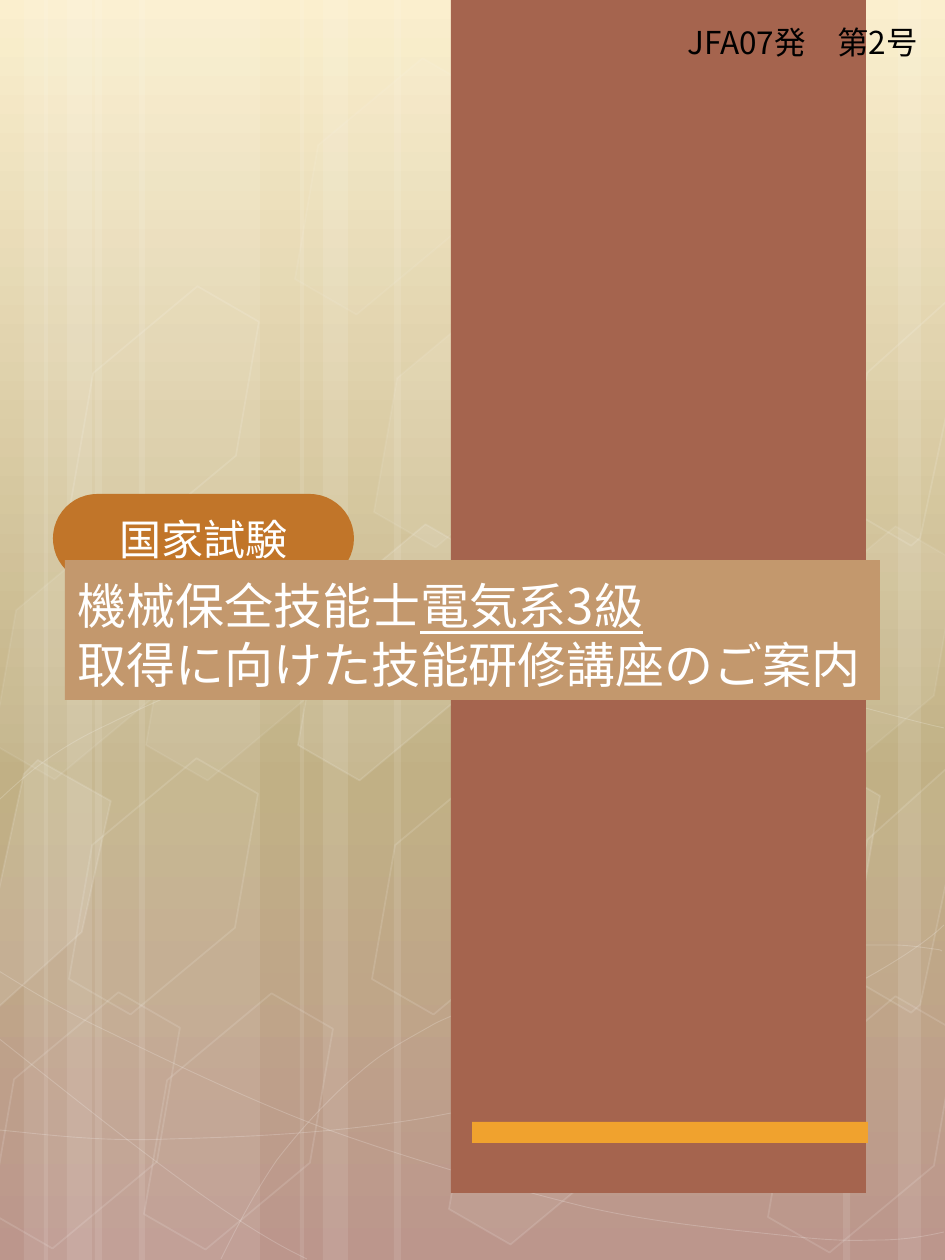
from copy import deepcopy
from math import cos, radians, sin

from lxml.etree import SubElement
from pptx import Presentation
from pptx.dml.color import RGBColor
from pptx.enum.shapes import MSO_SHAPE
from pptx.enum.text import MSO_ANCHOR, MSO_AUTO_SIZE, PP_ALIGN
from pptx.oxml.ns import qn
from pptx.util import Emu, Pt

WHITE = RGBColor(0xFF, 0xFF, 0xFF)
BLACK = RGBColor(0x00, 0x00, 0x00)
BRICK = RGBColor(0xA5, 0x64, 0x4E)
AMBER = RGBColor(0xF0, 0xA2, 0x2E)
ORANGE = RGBColor(0xC1, 0x75, 0x29)
TAN = RGBColor(0xC3, 0x98, 0x6D)
SKY = [
    (0, RGBColor(0xFB, 0xEE, 0xC9)),
    (0.62, RGBColor(0xBA, 0xA8, 0x78)),
    (1, RGBColor(0xB5, 0x8B, 0x80)),
]
SCALE = 914400 / 126
WIDTH, HEIGHT = 945, 1260
TILT = 30

WIDE, NARROW, MEDIUM = 165, 48, 78
STRIPES = [
    (95, WIDE, 0), (0, NARROW, 0), (24, MEDIUM, 0),
    (139, WIDE, 0), (44, NARROW, 0), (67, MEDIUM, 0),
    (685, WIDE, 180), (898, NARROW, 180), (843, MEDIUM, 180),
    (394, 291, 0), (300, NARROW, 0), (323, MEDIUM, 0),
]
CURVES = [
    [(-1, 1130), (50, 1135), (101, 1142), (171, 1139), (243, 1137), (330, 1134),
     (425, 1118), (519, 1101), (654, 1068), (740, 1037), (827, 1004), (915, 954),
     (944, 925)],
    [(-1, 800), (26, 775), (53, 750), (107, 725), (160, 699), (237, 663),
     (320, 650), (404, 638), (507, 638), (610, 650), (714, 663), (887, 716),
     (944, 728)],
    [(-3, 1037), (113, 1129), (226, 1221), (307, 1259)],
    [(-1, 971), (28, 989), (58, 1008), (113, 1034), (168, 1061), (251, 1101),
     (329, 1130), (410, 1159), (508, 1188), (586, 1207), (664, 1225), (748, 1231),
     (798, 1237), (848, 1242), (861, 1240), (885, 1240), (910, 1239), (926, 1236),
     (944, 1232)],
    [(221, 1259), (238, 1225), (255, 1192), (277, 1160), (300, 1130), (331, 1096),
     (358, 1074), (384, 1051), (401, 1043), (436, 1023), (470, 1007), (534, 983),
     (567, 971), (600, 960), (605, 960), (635, 955), (664, 951), (709, 946),
     (742, 945), (775, 942), (829, 945), (829, 945), (850, 945), (871, 945),
     (892, 945), (909, 945), (926, 948), (934, 949), (942, 950), (940, 950),
     (942, 951)],
]
HEXAGONS = [
    (310, 525, 10, 12), (384, 759, 0, 12), (386, 292, 7, 8), (307, 59, 4, 8),
    (461, 989, 6, 12), (3, 993, 0, 12), (5, 524, 7, 8), (81, 759, 0, 12),
    (156, 994, 0, 12), (158, 525, 7, 8), (82, 287, 0, 12), (703, 761, 10, 12),
    (780, 997, 0, 12), (780, 527, 7, 8),
]
LEFT_CUT = [(24, 774), (38, 760), (111, 801), (82, 932), (-18, 1022), (-28, 1016)]
RIGHT_CUT = [(867, 840), (966, 751), (973, 755), (920, 1005), (911, 1013), (839, 971)]
UPPER_CUT = [(x, y - 467) for x, y in RIGHT_CUT]
CUT_HEXAGONS = [
    (LEFT_CUT, (26, 900), 10), (RIGHT_CUT, (922, 872), 4), (UPPER_CUT, (922, 405), 0),
]


def px(value):
    return Emu(round(value * SCALE))


def turn(points, center, degrees):
    cx, cy = center
    c, n = cos(radians(degrees)), sin(radians(degrees))
    return [(cx + (x - cx) * c - (y - cy) * n, cy + (x - cx) * n + (y - cy) * c)
            for x, y in points]


class Deck:
    def __init__(self, s):
        self.s = s
        self.shapes = s.shapes

    def background(self, stops):
        fill = self.s.background.fill
        fill.gradient()
        fill.gradient_angle = 270
        gs_list = self.s.element.find(".//" + qn("a:gsLst"))
        gs_list.append(deepcopy(gs_list[0]))
        for stop, (position, color) in zip(fill.gradient_stops, stops):
            stop.position = position
            stop.color.rgb = color

    def open_backdrop(self):
        self.backdrop = self.s.shapes.add_group_shape()
        self.shapes = self.backdrop.shapes

    def close_backdrop(self):
        layout = self.s.slide_layout
        for sp in list(layout.placeholders)[1:]:
            layout.shapes.element.remove(sp.element)
        layout.shapes.element.append(self.backdrop.element)
        self.shapes = self.s.shapes

    def fade(self, sp, tag, alpha):
        clr = sp.element.find(f".//{qn('p:spPr')}/{tag}/{qn('a:srgbClr')}")
        SubElement(clr, qn("a:alpha")).set("val", str(alpha * 1000))

    def paint(self, sp, color=WHITE, alpha=100, line=0, line_alpha=12):
        sp.shadow.inherit = False
        if alpha:
            sp.fill.solid()
            sp.fill.fore_color.rgb = color
            if alpha < 100:
                self.fade(sp, qn("a:solidFill"), alpha)
        else:
            sp.fill.background()
        if line:
            sp.line.color.rgb = WHITE
            sp.line.width = Pt(line)
            self.fade(sp, f"{qn('a:ln')}/{qn('a:solidFill')}", line_alpha)
        else:
            sp.line.fill.background()

    def shape(self, kind, x, y, w, h, rotation=0, **style):
        sp = self.shapes.add_shape(kind, px(x), px(y), px(w), px(h))
        sp.rotation = rotation
        self.paint(sp, **style)
        return sp

    def outline(self, points, close, rotation=0, **style):
        points = [(px(x), px(y)) for x, y in points]
        builder = self.shapes.build_freeform(*points[0])
        builder.add_line_segments(points[1:], close=close)
        sp = builder.convert_to_shape()
        sp.rotation = rotation
        self.paint(sp, **style)
        return sp

    def curve(self, points, **style):
        sp = self.outline(points, False, alpha=0, **style)
        outline = sp.element.find(".//" + qn("a:path"))
        lines = outline.findall(qn("a:lnTo"))
        for i in range(0, len(lines), 3):
            bend = SubElement(outline, qn("a:cubicBezTo"))
            for line in lines[i:i + 3]:
                bend.append(line[0])
                outline.remove(line)

    def run(self, p, text, font, size, color, underline=None):
        r = p.add_run()
        r.text = text
        r.font.name = font
        r.font.size = Pt(size)
        r.font.color.rgb = color
        r.font.underline = underline
        SubElement(r.font._element, qn("a:ea")).set("typeface", font)

    def frame(self, sp, anchor, align):
        tf = sp.text_frame
        tf.word_wrap = True
        tf.auto_size = MSO_AUTO_SIZE.NONE
        tf.vertical_anchor = anchor
        p = tf.paragraphs[0]
        p.alignment = align
        return p

    def label(self, sp, *run):
        self.run(self.frame(sp, MSO_ANCHOR.MIDDLE, PP_ALIGN.CENTER), *run)

    def text(self, x, y, w, h, *run):
        self.label(self.shapes.add_textbox(px(x), px(y), px(w), px(h)), *run)

    def title(self, x, y, w, h, color, lines, *style):
        sp = self.s.shapes.title
        sp.left, sp.top, sp.width, sp.height = px(x), px(y), px(w), px(h)
        sp.fill.solid()
        sp.fill.fore_color.rgb = color
        p = self.frame(sp, MSO_ANCHOR.BOTTOM, PP_ALIGN.LEFT)
        for i, line in enumerate(lines):
            if i:
                p.add_line_break()
            for text, underline in line:
                self.run(p, text, *style, underline)
        self.s.shapes.element.append(sp.element)


def main():
    prs = Presentation()
    prs.slide_width, prs.slide_height = px(WIDTH), px(HEIGHT)
    deck = Deck(prs.slides.add_slide(prs.slide_layouts[5]))
    deck.background(SKY)
    deck.open_backdrop()
    for x, w, rotation in STRIPES:
        deck.shape(MSO_SHAPE.RECTANGLE, x, 0, w, HEIGHT, rotation, alpha=10)
    for points in CURVES:
        deck.curve(points, line=0.5, line_alpha=20)
    for x, y, alpha, line_alpha in HEXAGONS:
        sp = deck.shape(MSO_SHAPE.HEXAGON, x, y, 165, 255, TILT,
                        alpha=alpha, line=1, line_alpha=line_alpha)
        sp.adjustments[0] = 0.285
    for points, center, alpha in CUT_HEXAGONS:
        deck.outline(turn(points, center, -TILT), True, TILT, alpha=alpha, line=1)
    deck.close_backdrop()
    deck.shape(MSO_SHAPE.RECTANGLE, 451, -18, 415, 1211, color=BRICK)
    deck.shape(MSO_SHAPE.RECTANGLE, 472, 1122, 396, 21, color=AMBER)
    pill = deck.shape(MSO_SHAPE.ROUNDED_RECTANGLE, 53, 494, 301, 89, color=ORANGE)
    pill.adjustments[0] = 0.5
    deck.label(pill, "国家試験", "TeX Gyre Adventor", 24, WHITE)
    deck.text(641, 17, 323, 50, "JFA07発　第2号", "Noto Sans CJK SC", 18, BLACK)
    deck.title(65, 560, 815, 140, TAN, [
        [("機械保全技能士", False), ("電気系3級", True)],
        [("取得に向けた技能研修講座のご案内", False)],
    ], "Noto Sans CJK JP", 28, WHITE)
    prs.save("out.pptx")


if __name__ == "__main__":
    main()
